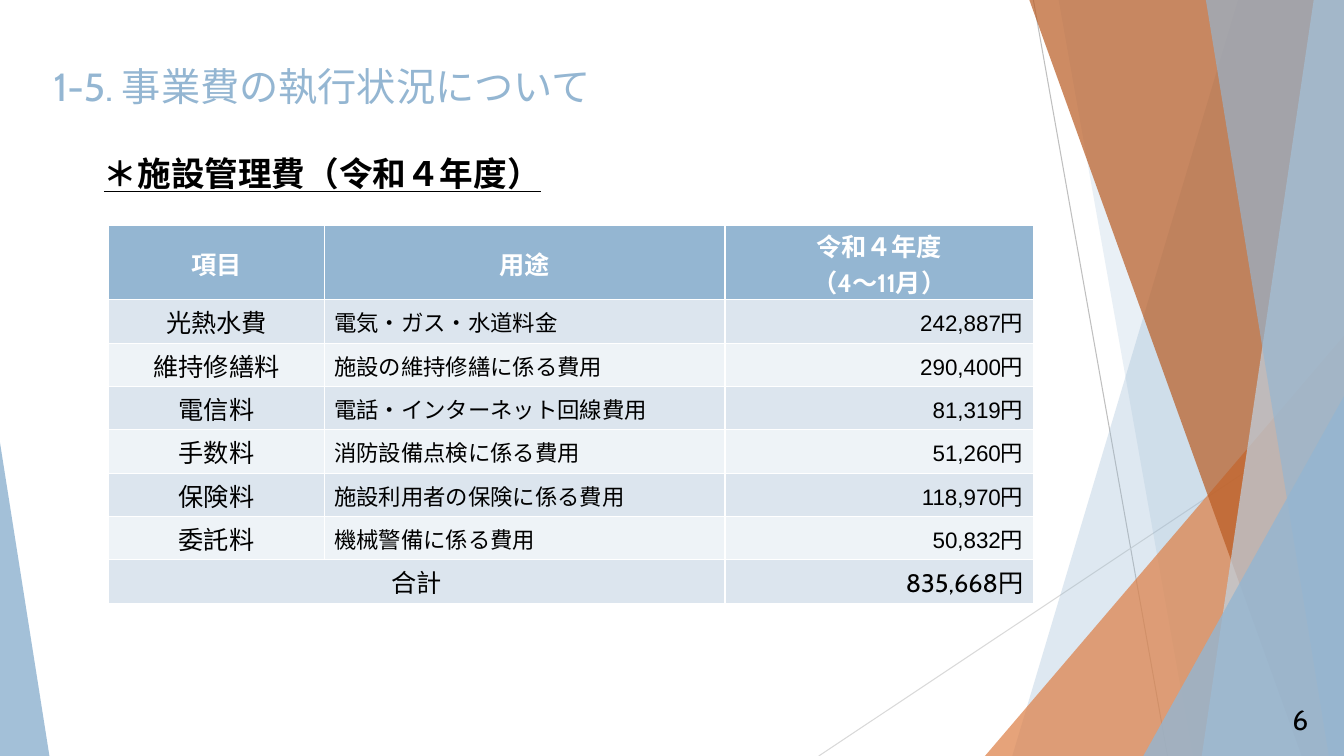
from collections import namedtuple

from lxml import etree
from pptx import Presentation
from pptx import util as u
from pptx.dml.color import RGBColor
from pptx.enum import shapes, text
from pptx.oxml import ns

BLUE = RGBColor(0x94, 0xB6, 0xD2)
PALE_BLUE = RGBColor(0xBF, 0xD3, 0xE4)
ORANGE = RGBColor(0xDD, 0x80, 0x47)
RUST = RGBColor(0xB9, 0x5B, 0x22)
ROW_DARK = RGBColor(0xDC, 0xE5, 0xEE)
ROW_LIGHT = RGBColor(0xEE, 0xF3, 0xF7)
GREY = RGBColor(0xBF, 0xBF, 0xBF)
LIGHT_GREY = RGBColor(0xD9, 0xD9, 0xD9)
BLACK = RGBColor(0, 0, 0)
WHITE = RGBColor(0xFF, 0xFF, 0xFF)

LEFT, CENTER, RIGHT = text.PP_ALIGN.LEFT, text.PP_ALIGN.CENTER, text.PP_ALIGN.RIGHT
Box = namedtuple("Box", "left top width height")

HEADER = ["項目", "用途", "令和４年度\n（4～11月）"]
COSTS = [
    ("光熱水費", "電気・ガス・水道料金", "242,887円"),
    ("維持修繕料", "施設の維持修繕に係る費用", "290,400円"),
    ("電信料", "電話・インターネット回線費用", "81,319円"),
    ("手数料", "消防設備点検に係る費用", "51,260円"),
    ("保険料", "施設利用者の保険に係る費用", "118,970円"),
    ("委託料", "機械警備に係る費用", "50,832円"),
]
TOTAL = ("合計", "", "835,668円")


def part(box, left, top, width, height):
    """Box inside another one, in percent of its size."""
    return Box(int(box.left + box.width * left / 100), int(box.top + box.height * top / 100),
               int(box.width * width / 100), int(box.height * height / 100))


def write(para, words, size, color, font="Cabin", bold=False, align=LEFT):
    para.alignment = align
    span = para.add_run()
    span.text = words
    span.font.size = u.Pt(size)
    span.font.name = font
    span.font.bold = bold
    span.font.color.rgb = color
    return span


def paint(shape, color, opacity):
    shape.shadow.inherit = False
    shape.line.fill.background()
    shape.fill.solid()
    shape.fill.fore_color.rgb = color
    tint = shape.fill._xPr.find(".//" + ns.qn("a:srgbClr"))
    etree.SubElement(tint, ns.qn("a:alpha")).set("val", str(opacity * 1000))


def add_line(page, box, start, end, color):
    first, last = part(box, *start, 0, 0), part(box, *end, 0, 0)
    line = page.shapes.add_connector(shapes.MSO_CONNECTOR.STRAIGHT,
                                     first.left, first.top, last.left, last.top)
    line.line.color.rgb = color
    line.line.width = u.Pt(0.75)
    etree.SubElement(line._element.spPr, ns.qn("a:effectLst"))


def add_band(page, box, top_x, bottom_x, color, opacity):
    """Area between a slanted edge and the right side of the box."""
    corners = [part(box, x, y, 0, 0)[:2]
               for x, y in ((top_x, 0), (100, 0), (100, 100), (bottom_x, 100))]
    builder = page.shapes.build_freeform(*corners[0])
    builder.add_line_segments(corners[1:], close=True)
    paint(builder.convert_to_shape(), color, opacity)


def add_triangle(page, box, apex, color, opacity):
    triangle = page.shapes.add_shape(shapes.MSO_SHAPE.ISOSCELES_TRIANGLE, *box)
    triangle.adjustments[0] = apex
    paint(triangle, color, opacity)


def add_decoration(page, box):
    add_line(page, box, (76.89, 0), (86.87, 100), GREY)
    add_line(page, box, (100, 53.73), (60.92, 100), LIGHT_GREY)
    add_band(page, box, 92.12, 75.32, BLUE, 30)
    add_band(page, box, 78.77, 88.75, BLUE, 20)
    add_triangle(page, part(box, 73.29, 44.4, 26.71, 55.6), 1, ORANGE, 72)
    add_band(page, box, 76.59, 96.85, RUST, 70)
    add_band(page, box, 97.75, 89.42, PALE_BLUE, 70)
    add_band(page, box, 89.72, 98.87, BLUE, 65)
    add_triangle(page, part(box, 85.07, 52.4, 14.93, 47.6), 1, BLUE, 80)
    add_triangle(page, part(box, 0, 58.53, 3.68, 41.47), 0, BLUE, 85)


def place(shape, box, anchor):
    shape.left, shape.top, shape.width, shape.height = box
    frame = shape.text_frame
    frame.word_wrap = True
    frame.auto_size = text.MSO_AUTO_SIZE.NONE
    frame.vertical_anchor = anchor
    return frame.paragraphs[0]


def add_headings(page, box):
    title = place(page.shapes.title, part(box, 3.23, 4.27, 86.27, 14.13), text.MSO_ANCHOR.MIDDLE)
    write(title, "1-5. 事業費の執行状況について", 28, BLUE)

    subtitle = place(page.placeholders[1], part(box, 6.98, 18.4, 76.44, 9.07), text.MSO_ANCHOR.TOP)
    subtitle.line_spacing = u.Pt(35)
    subtitle.space_before = u.Pt(10)
    write(subtitle, "＊施設管理費（令和４年度）", 24, BLACK, bold=True).font.underline = True
    # No bullet and no hanging indent
    props = subtitle._p.get_or_add_pPr()
    props.set("marL", "0")
    props.set("indent", "0")
    etree.SubElement(props, ns.qn("a:buNone"))


def add_page_number(page, box):
    number = page.shapes.add_textbox(*box)
    write(place(number, box, text.MSO_ANCHOR.TOP), "6", 20, BLACK)


def fill_cell(cell, words, fill, **style):
    cell.fill.solid()
    cell.fill.fore_color.rgb = fill
    cell.vertical_anchor = text.MSO_ANCHOR.MIDDLE
    cell.margin_top, cell.margin_bottom = u.Inches(0.01), 0
    for index, line in enumerate(words.split("\n")):
        frame = cell.text_frame
        para = frame.add_paragraph() if index else frame.paragraphs[0]
        write(para, line, **style)


def add_cost_table(page, box):
    rows = [HEADER, *COSTS, TOTAL]
    table = page.shapes.add_table(len(rows), len(HEADER), *box).table
    for column, share in zip(table.columns, (23.3, 43.35, 33.35)):
        column.width = int(box.width * share / 100)
    for index, row in enumerate(table.rows):
        row.height = int(box.height * (11.5 if index else 19.5) / 100)

    # Header
    for cell, words in zip(table.rows[0].cells, HEADER):
        fill_cell(cell, words, BLUE, size=18, color=WHITE, bold=True, align=CENTER)
    # Cost items
    styles = [dict(size=18, align=CENTER), dict(size=16), dict(size=16, font="Arial", align=RIGHT)]
    for index, costs in enumerate(COSTS, 1):
        fill = ROW_DARK if index % 2 else ROW_LIGHT
        for cell, words, style in zip(table.rows[index].cells, costs, styles):
            fill_cell(cell, words, fill, color=BLACK, **style)
    # Total
    label, covered, amount = table.rows[len(rows) - 1].cells
    label.merge(covered)
    fill_cell(label, TOTAL[0], ROW_DARK, size=18, color=BLACK, align=CENTER)
    fill_cell(amount, TOTAL[2], ROW_DARK, size=18, color=BLACK, align=RIGHT)


def main():
    deck = Presentation()
    deck.slide_width, deck.slide_height = u.Inches(13.33), u.Inches(7.5)
    page = deck.slides.add_slide(deck.slide_layouts[1])
    box = Box(0, 0, deck.slide_width, deck.slide_height)
    add_decoration(page, box)
    add_headings(page, box)
    add_page_number(page, part(box, 95.42, 92.27, 3.23, 5.87))
    add_cost_table(page, part(box, 8.1, 29.87, 68.79, 49.87))
    deck.save("out.pptx")


if __name__ == "__main__":
    main()
